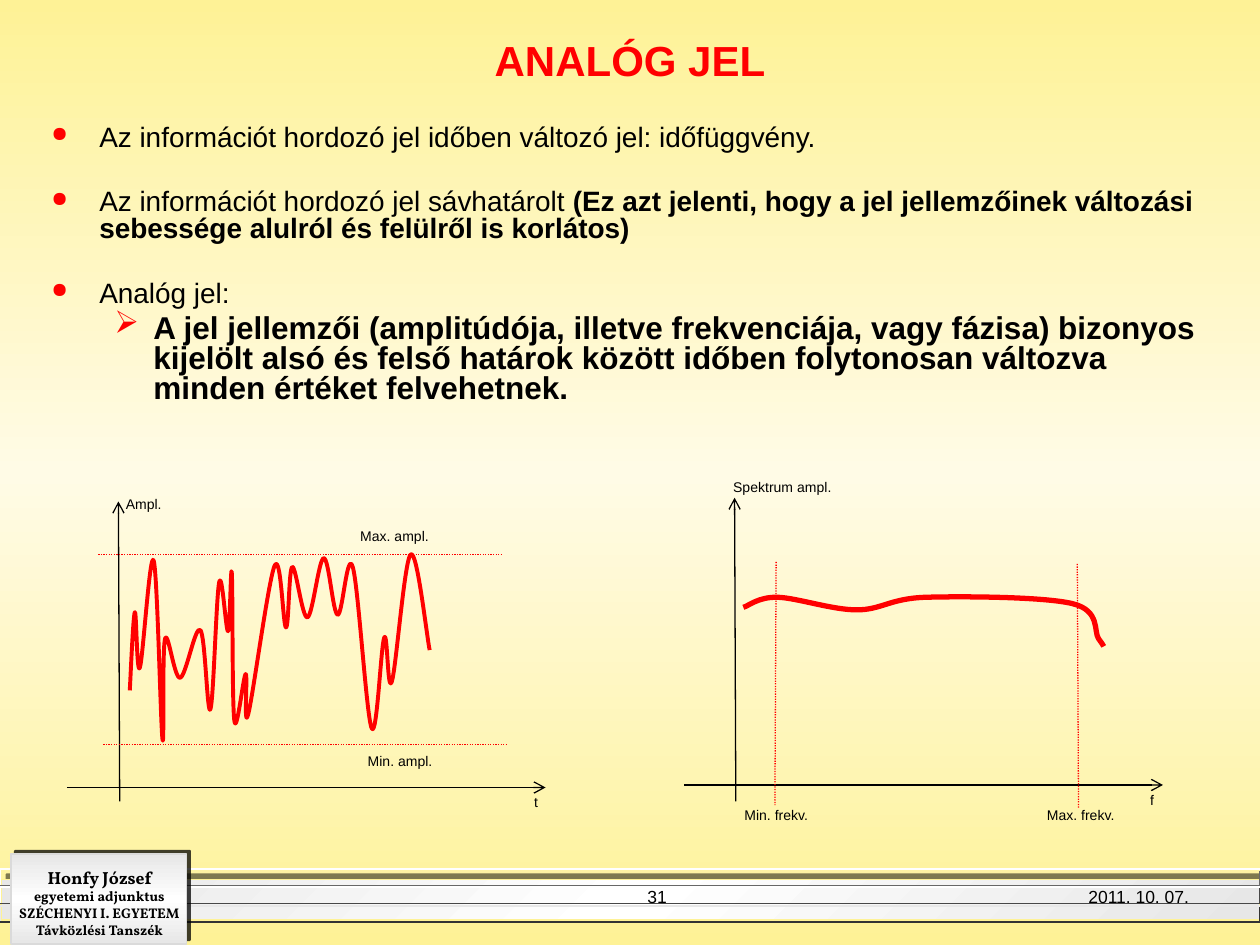
from copy import deepcopy

from lxml.etree import SubElement
from pptx import Presentation
from pptx.dml.color import RGBColor
from pptx.enum.dml import MSO_LINE
from pptx.enum.shapes import MSO_CONNECTOR, MSO_SHAPE
from pptx.enum.text import MSO_ANCHOR, PP_ALIGN
from pptx.oxml.ns import qn
from pptx.util import Inches, Pt

RED = RGBColor(0xFF, 0x00, 0x00)
BLACK = RGBColor(0x00, 0x00, 0x00)
WHITE = RGBColor(0xFF, 0xFF, 0xFF)
YELLOW = RGBColor(0xFE, 0xF2, 0x96)
CREAM = RGBColor(0xFF, 0xFB, 0xE6)
SILVER = RGBColor(0xE7, 0xE7, 0xE7)
BOX_EDGE = RGBColor(0xDA, 0xDA, 0xDA)
GROOVES = [
    (6.90, WHITE, RGBColor(0x67, 0x67, 0x67)),
    (7.04, WHITE, RGBColor(0x47, 0x47, 0x47)),
    (7.19, RGBColor(0xE8, 0xE8, 0xE8), RGBColor(0x33, 0x33, 0x33)),
]

SIGNAL = [
    (1.03, 5.48), (1.07, 4.86), (1.11, 5.30), (1.22, 4.45), (1.29, 5.87),
    (1.31, 5.07), (1.43, 5.38), (1.59, 5.00), (1.67, 5.63), (1.74, 4.62),
    (1.81, 5.01), (1.84, 4.55), (1.86, 5.72), (1.95, 5.35), (1.97, 5.67),
    (2.18, 4.49), (2.27, 4.98), (2.32, 4.50), (2.44, 4.90), (2.57, 4.43),
    (2.68, 4.88), (2.80, 4.50), (2.95, 5.78), (3.05, 5.06), (3.11, 5.41),
    (3.26, 4.40), (3.41, 5.16),
]
SPECTRUM = [
    (5.90, 4.82), (6.17, 4.74), (6.80, 4.84), (7.35, 4.74),
    (8.51, 4.79), (8.72, 5.07), (8.76, 5.13),
]
AXES = [
    ((0.95, 6.36), (0.94, 3.98)), ((0.53, 6.25), (4.33, 6.25)),
    ((5.84, 6.36), (5.83, 3.95)), ((5.43, 6.23), (9.23, 6.23)),
]
LIMITS = [
    ((0.78, 4.40), (3.99, 4.40)), ((0.82, 5.91), (4.02, 5.91)),
    ((6.16, 4.46), (6.15, 6.39)), ((8.56, 6.41), (8.55, 4.47)),
]
LABELS = [
    ("t", 4.14, 6.25, 0.44), ("Ampl.", 0.90, 3.88, 0.97),
    ("Max. ampl.", 2.76, 4.14, 1.39), ("Min. ampl.", 2.82, 5.92, 1.36),
    ("f", 9.03, 6.23, 0.44), ("Spektrum ampl.", 5.72, 3.75, 1.35),
    ("Max. frekv.", 8.21, 6.35, 0.81), ("Min. frekv.", 5.81, 6.35, 1.36),
]
BODY = [
    (0, 0, [("Az információt hordozó jel időben változó jel: időfüggvény.", False)]),
    (0, 21.5, [("Az információt hordozó jel sávhatárolt ", False),
               ("(Ez azt jelenti, hogy a jel jellemzőinek változási sebessége "
                "alulról és felülről is korlátos)", True)]),
    (0, 21.5, [("Analóg jel:", False)]),
    (1, 3.6, [("A jel jellemzői (amplitúdója, illetve frekvenciája, vagy fázisa) "
               "bizonyos kijelölt alsó és felső határok között időben folytonosan "
               "változva minden értéket felvehetnek.", True)]),
]
LEVELS = [("●", 75, 0.38, -0.38, 16), ("➢", 100, 0.81, -0.31, 18)]


def fill_gradient(fill, owner, edge, middle, angle):
    fill.gradient()
    fill.gradient_angle = angle
    first, second = fill.gradient_stops
    first.color.rgb, second.color.rgb = edge, middle
    first.position, second.position = 0, 0.5
    stops = next(owner.iter(qn("a:gsLst")))
    last = deepcopy(stops[0])
    last.set("pos", "100000")
    stops.append(last)


def add_panel(slide, left, top, width, height, edge, angle, distance, opacity):
    panel = slide.shapes.add_shape(
        MSO_SHAPE.RECTANGLE, Inches(left), Inches(top), Inches(width), Inches(height))
    fill_gradient(panel.fill, panel._element, SILVER, WHITE, angle)
    panel.line.color.rgb = edge
    panel.line.width = Pt(1)
    panel.shadow.inherit = False
    effects = next(panel._element.iter(qn("a:effectLst")))
    shadow = SubElement(effects, qn("a:outerShdw"), dist=str(Pt(distance)),
                        dir="18900000", algn="ctr", rotWithShape="0")
    color = SubElement(shadow, qn("a:srgbClr"), val=str(BLACK))
    SubElement(color, qn("a:alpha"), val=str(opacity * 1000))


def add_outline(slide, points, color, width):
    start, *rest = [(Inches(x), Inches(y)) for x, y in points]
    builder = slide.shapes.build_freeform(*start)
    builder.add_line_segments(rest, close=False)
    outline = builder.convert_to_shape()
    outline.fill.background()
    outline.line.color.rgb = color
    outline.line.width = Pt(width)
    outline.shadow.inherit = False
    return outline


def add_curve(slide, points, width):
    curve = add_outline(slide, points, RED, width)
    knots = [(int(pt.get("x")), int(pt.get("y")))
             for pt in curve._element.iter(qn("a:pt"))]
    padded = [knots[0], *knots, knots[-1]]
    segments = list(curve._element.iter(qn("a:lnTo")))
    for segment, before, start, end, after in zip(
            segments, padded, padded[1:], padded[2:], padded[3:]):
        leaving = [s + (e - b) / 6 for b, s, e in zip(before, start, end)]
        arriving = [e - (a - s) / 6 for s, e, a in zip(start, end, after)]
        bezier = segment.makeelement(qn("a:cubicBezTo"))
        for x, y in (leaving, arriving, end):
            SubElement(bezier, qn("a:pt"), x=str(round(x)), y=str(round(y)))
        segment.getparent().replace(segment, bezier)


def add_line(slide, start, end, color):
    line = slide.shapes.add_connector(
        MSO_CONNECTOR.STRAIGHT, *(Inches(value) for value in (*start, *end)))
    line.line.color.rgb = color
    line.line.width = Pt(0.75)
    SubElement(line._element.spPr, qn("a:effectLst"))
    return line


def add_axis(slide, start, end):
    axis = add_line(slide, start, end, BLACK)
    SubElement(axis.line._get_or_add_ln(), qn("a:tailEnd"), type="arrow")


def add_limit(slide, start, end):
    add_line(slide, start, end, RED).line.dash_style = MSO_LINE.ROUND_DOT


def format_run(run, size, color=BLACK, bold=False, font="Arial"):
    run.font.name = font
    run.font.size = Pt(size)
    run.font.bold = bold
    run.font.color.rgb = color


def add_frame(slide, left, top, width, height):
    box = slide.shapes.add_textbox(
        Inches(left), Inches(top), Inches(width), Inches(height))
    box.text_frame.word_wrap = True
    return box.text_frame


def add_text(slide, text, left, top, width, height, sizes, align=PP_ALIGN.LEFT, **style):
    frame = add_frame(slide, left, top, width, height)
    frame.text = text
    for paragraph, size in zip(frame.paragraphs, sizes):
        paragraph.alignment = align
        format_run(paragraph.runs[0], size, **style)
    return frame


def add_bullet(paragraph, character, scale, margin, indent):
    properties = paragraph._p.get_or_add_pPr()
    properties.set("marL", str(Inches(margin)))
    properties.set("indent", str(Inches(indent)))
    color = SubElement(properties, qn("a:buClr"))
    SubElement(color, qn("a:srgbClr"), val=str(RED))
    SubElement(properties, qn("a:buSzPct"), val=str(scale * 1000))
    SubElement(properties, qn("a:buChar"), char=character)


def add_body(slide):
    frame = add_frame(slide, 0.31, 0.95, 9.5, 2.8)
    for index, (level, gap, parts) in enumerate(BODY):
        paragraph = frame.add_paragraph() if index else frame.paragraphs[0]
        *bullet, size = LEVELS[level]
        paragraph.level = level
        paragraph.line_spacing = 0.8
        paragraph.space_before = Pt(gap)
        add_bullet(paragraph, *bullet)
        for text, bold in parts:
            run = paragraph.add_run()
            run.text = text
            format_run(run, size, bold=bold)


def add_footer(slide):
    add_panel(slide, 0.01, 6.98, 9.99, 0.32, YELLOW, 315, 4.2, 50)
    for top, light, dark in GROOVES:
        bottom = top + 0.13
        add_outline(slide, [(0, bottom), (0, top), (10, top)], light, 1)
        add_outline(slide, [(10, top + 0.01), (10, bottom), (0, bottom)], dark, 1)
    add_panel(slide, 0.09, 6.78, 1.39, 0.71, BOX_EDGE, 90, 2.8, 75)
    add_text(slide, "Honfy József\negyetemi adjunktus\nSZÉCHENYI I. EGYETEM\nTávközlési Tanszék",
             0, 6.83, 1.58, 0.67, [10, 8, 8, 8], PP_ALIGN.CENTER, bold=True, font="Vollkorn")
    add_text(slide, "2011. 10. 07.", 8.54, 6.98, 1.46, 0.31, [10])
    add_text(slide, "31", 4.84, 6.98, 0.55, 0.31, [10], PP_ALIGN.RIGHT)


def add_diagrams(slide):
    for start, end in AXES:
        add_axis(slide, start, end)
    for start, end in LIMITS:
        add_limit(slide, start, end)
    for text, left, top, width in LABELS:
        add_text(slide, text, left, top, width, 0.23, [8])
    add_curve(slide, SIGNAL, 2.25)
    add_curve(slide, SPECTRUM, 3)


def main():
    deck = Presentation()
    deck.slide_width, deck.slide_height = Inches(10), Inches(7.5)
    slide = deck.slides.add_slide(deck.slide_layouts[6])
    fill_gradient(slide.background.fill, slide._element, YELLOW, CREAM, 90)
    add_footer(slide)
    title = add_text(slide, "ANALÓG JEL", 0.75, 0.13, 8.5, 0.59, [24],
                     PP_ALIGN.CENTER, color=RED, bold=True)
    title.vertical_anchor = MSO_ANCHOR.BOTTOM
    add_body(slide)
    add_diagrams(slide)
    deck.save("out.pptx")


if __name__ == "__main__":
    main()
